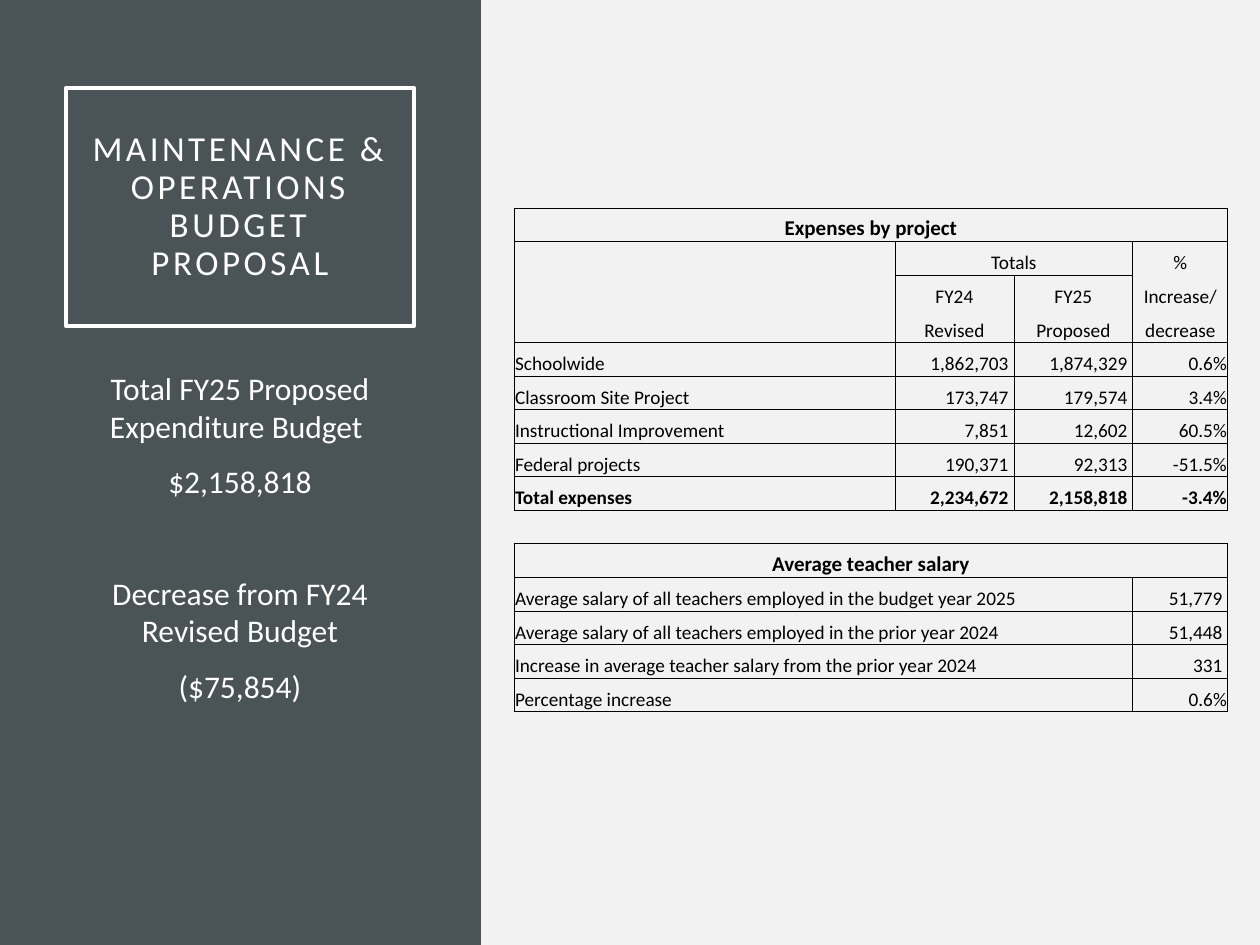
import dataclasses

import lxml.etree
import pptx
import pptx.dml.color
import pptx.enum.shapes
import pptx.enum.text
import pptx.oxml.ns
import pptx.util

EMU_PER_PX = 914400 / 126
ALIGN = pptx.enum.text.PP_ALIGN
ANCHOR = pptx.enum.text.MSO_ANCHOR
RECTANGLE = pptx.enum.shapes.MSO_SHAPE.RECTANGLE


@dataclasses.dataclass(frozen=True)
class Theme:
    font: str = "Calibri"
    paper: str = "F2F2F2"
    panel: str = "4A5356"
    light: str = "FFFFFF"
    ink: str = "000000"
    title_size: int = 20
    body_size: int = 18
    heading_size: int = 12
    cell_size: int = 11
    frame_width: float = 2.5
    grid_width: float = 0.5


THEME = Theme()

COLUMN_WIDTHS = [282, 99, 119, 119, 95]
BUDGET_ROWS = [
    ["Expenses by project", "", "", "", ""],
    ["", "", "Totals", "", "%"],
    ["", "", "FY24", "FY25", "Increase/"],
    ["", "", "Revised", "Proposed", "decrease"],
    ["Schoolwide", "", "1,862,703 ", "1,874,329 ", "0.6%"],
    ["Classroom Site Project", "", "173,747 ", "179,574 ", "3.4%"],
    ["Instructional Improvement", "", "7,851 ", "12,602 ", "60.5%"],
    ["Federal projects", "", "190,371 ", "92,313 ", "-51.5%"],
    ["Total expenses", "", "2,234,672 ", "2,158,818 ", "-3.4%"],
    ["", "", "", "", ""],
    ["Average teacher salary", "", "", "", ""],
    ["Average salary of all teachers employed in the budget year 2025", "", "", "", "51,779 "],
    ["Average salary of all teachers employed in the prior year 2024", "", "", "", "51,448 "],
    ["Increase in average teacher salary from the prior year 2024", "", "", "", "331 "],
    ["Percentage increase", "", "", "", "0.6%"],
]
HEADING_ROWS = (0, 10)
COLUMN_HEAD_ROWS = (1, 2, 3)
TOTAL_ROW = 8
GAP_ROW = 9
SALARY_ROWS = range(11, 15)
TOTALS_COLUMNS = (2, 3)


def px(length):
    return pptx.util.Emu(round(length * EMU_PER_PX))


def rgb(color):
    return pptx.dml.color.RGBColor.from_string(color)


def add_span(para, text, size, color, bold=False):
    span = para.add_run()
    span.text = text
    span.font.name = THEME.font
    span.font.size = pptx.util.Pt(size)
    span.font.color.rgb = rgb(color)
    span.font.bold = bold
    return span


def add_panel(page, left, top, width, height):
    panel = page.shapes.add_shape(RECTANGLE, px(left), px(top), px(width), px(height))
    panel.shadow.inherit = False
    panel.fill.solid()
    panel.fill.fore_color.rgb = rgb(THEME.panel)
    panel.line.fill.background()


def add_title(page, left, top, width, height):
    box = page.shapes.add_shape(RECTANGLE, px(left), px(top), px(width), px(height))
    box.shadow.inherit = False
    box.fill.background()
    box.line.color.rgb = rgb(THEME.light)
    box.line.width = pptx.util.Pt(THEME.frame_width)
    frame = box.text_frame
    frame.word_wrap = True
    frame.vertical_anchor = ANCHOR.MIDDLE
    frame.margin_left = frame.margin_right = px(25)
    frame.margin_top = frame.margin_bottom = px(25)
    para = frame.paragraphs[0]
    para.alignment = ALIGN.CENTER
    para.line_spacing = 0.9
    for index, line in enumerate(["MAINTENANCE & OPERATIONS", "BUDGET PROPOSAL"]):
        if index:
            para.add_line_break()
        span = add_span(para, line, THEME.title_size, THEME.light)
        span.font._element.set("spc", "200")


def add_summary(page, left, top, width, height):
    box = page.shapes.add_textbox(px(left), px(top), px(width), px(height))
    frame = box.text_frame
    frame.word_wrap = True
    # Each line of text with the space above it in points
    lines = [
        ("Total FY25 Proposed Expenditure Budget ", 10),
        ("$2,158,818", 10),
        ("Decrease from FY24 Revised Budget", 42),
        ("($75,854)", 10),
    ]
    for index, (text, space) in enumerate(lines):
        para = frame.add_paragraph() if index else frame.paragraphs[0]
        para.alignment = ALIGN.CENTER
        para.space_before = pptx.util.Pt(space)
        add_span(para, text, THEME.body_size, THEME.light)


def cell_sides(row, column):
    """Sides of a cell that carry a grid line."""
    if row == GAP_ROW:
        return "TB"
    sides = set("LRTB")
    if row < GAP_ROW and row not in HEADING_ROWS:
        # The label takes two columns with no line between them
        sides -= {0: {"R"}, 1: {"L"}}.get(column, set())
    if row in COLUMN_HEAD_ROWS:
        under_totals = column in TOTALS_COLUMNS
        if row != 1 and not (row == 2 and under_totals):
            sides.discard("T")
        if row != 3 and not (row == 1 and under_totals):
            sides.discard("B")
    return sides


def draw_borders(cell, sides):
    properties = cell._tc.get_or_add_tcPr()
    for side in "LRTB":
        line = lxml.etree.SubElement(properties, pptx.oxml.ns.qn("a:ln" + side))
        if side in sides:
            line.set("w", str(pptx.util.Pt(THEME.grid_width)))
            fill = lxml.etree.SubElement(line, pptx.oxml.ns.qn("a:solidFill"))
            lxml.etree.SubElement(fill, pptx.oxml.ns.qn("a:srgbClr"), val=THEME.ink)
        else:
            lxml.etree.SubElement(line, pptx.oxml.ns.qn("a:noFill"))


def fill_cell(cell, row, column, text):
    heading = row in HEADING_ROWS
    size = THEME.heading_size if heading else THEME.cell_size
    cell.margin_left = cell.margin_right = cell.margin_top = px(1)
    cell.margin_bottom = 0
    cell.vertical_anchor = ANCHOR.BOTTOM
    draw_borders(cell, cell_sides(row, column))
    cell.fill.background()
    para = cell.text_frame.paragraphs[0]
    if heading or row in COLUMN_HEAD_ROWS:
        para.alignment = ALIGN.CENTER
    else:
        para.alignment = ALIGN.RIGHT if column else ALIGN.LEFT
    if text:
        add_span(para, text, size, THEME.ink, heading or row == TOTAL_ROW)
    else:
        # Empty cells keep the small type so that rows stay low
        lxml.etree.SubElement(para._p, pptx.oxml.ns.qn("a:endParaRPr"), sz=str(size * 100))


def add_budget_table(page, left, top, width, height):
    count = len(BUDGET_ROWS)
    table = page.shapes.add_table(
        count, len(COLUMN_WIDTHS), px(left), px(top), px(width), px(height)).table
    table.first_row = table.horz_banding = False
    for column, column_width in zip(table.columns, COLUMN_WIDTHS):
        column.width = px(column_width)
    for row, texts in enumerate(BUDGET_ROWS):
        table.rows[row].height = px(height / count)
        for column, text in enumerate(texts):
            fill_cell(table.cell(row, column), row, column, text)
    # Merged cells
    for row in HEADING_ROWS:
        table.cell(row, 0).merge(table.cell(row, 4))
    table.cell(1, TOTALS_COLUMNS[0]).merge(table.cell(1, TOTALS_COLUMNS[1]))
    for row in SALARY_ROWS:
        table.cell(row, 0).merge(table.cell(row, 3))


def main():
    deck = pptx.Presentation()
    deck.slide_width, deck.slide_height = px(1260), px(945)
    page = deck.slides.add_slide(deck.slide_layouts[6])
    page.background.fill.solid()
    page.background.fill.fore_color.rgb = rgb(THEME.paper)
    add_panel(page, 0, 0, 481, 945)
    add_title(page, 66, 88, 348, 238)
    add_summary(page, 66, 363, 348, 471)
    add_budget_table(page, 514, 208, sum(COLUMN_WIDTHS), 504)
    deck.save("out.pptx")


if __name__ == "__main__":
    main()
